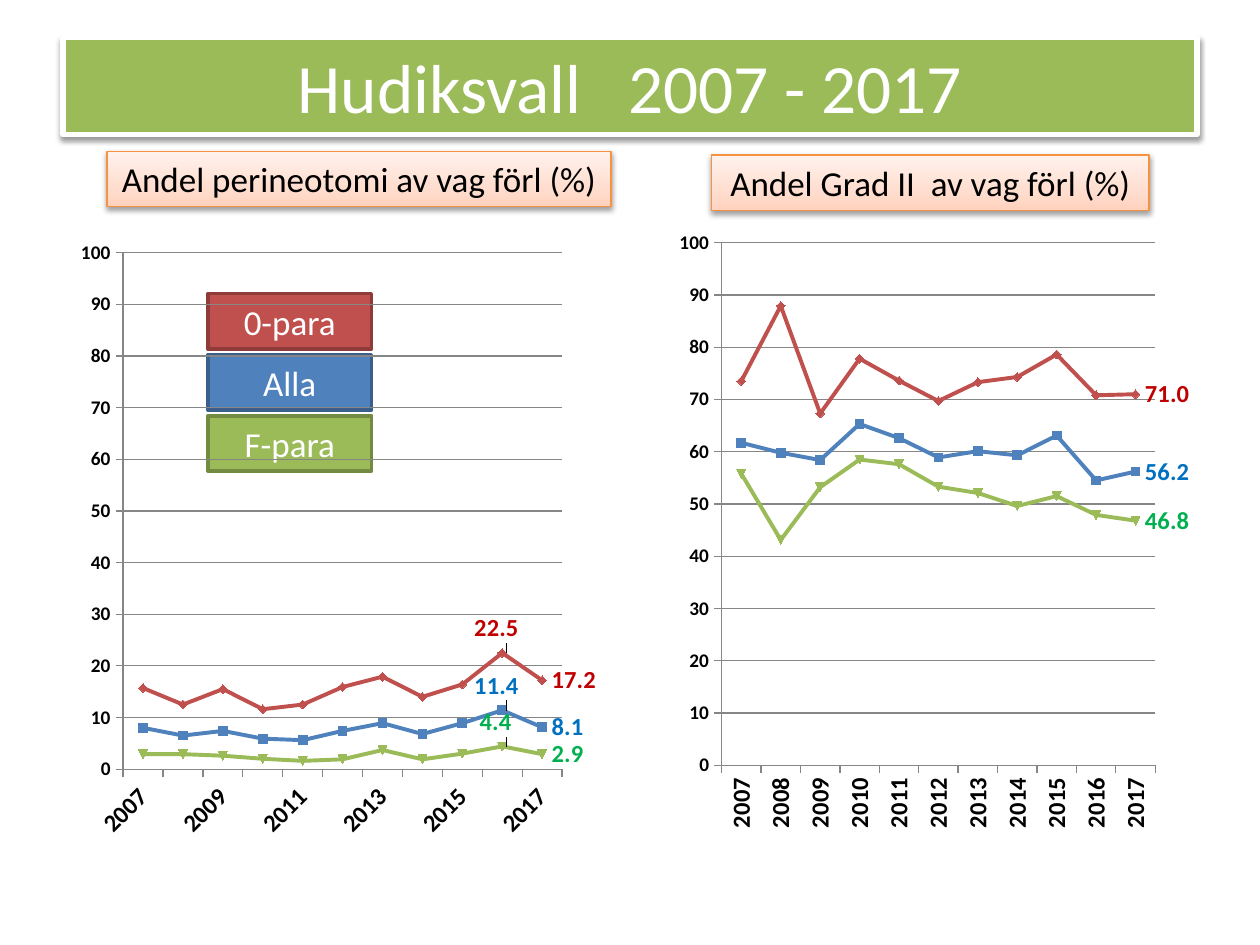
from pptx import Presentation
from pptx.chart.data import CategoryChartData
from pptx.dml.color import RGBColor
from pptx.enum.chart import XL_CHART_TYPE, XL_TICK_MARK
from pptx.enum.shapes import MSO_SHAPE
from pptx.enum.text import MSO_ANCHOR, PP_ALIGN
from pptx.oxml import parse_xml
from pptx.oxml.ns import qn
from pptx.util import Inches, Pt

LINE_MARKERS = XL_CHART_TYPE.LINE_MARKERS
TICK_OUT, TICK_NONE = XL_TICK_MARK.OUTSIDE, XL_TICK_MARK.NONE
RECTANGLE = MSO_SHAPE.RECTANGLE
MIDDLE = MSO_ANCHOR.MIDDLE
CENTER = PP_ALIGN.CENTER

COLUMNS, ROWS = 100, 75
WIDTH, HEIGHT = Inches(10), Inches(7.5)
FONT = "Calibri"
GRID_COLOR = "868686"
NAMESPACES = ('xmlns:a="http://schemas.openxmlformats.org/drawingml/2006/main" '
              'xmlns:c="http://schemas.openxmlformats.org/drawingml/2006/chart"')
YEARS = [str(year) for year in range(2007, 2018)]

GROUPS = {
    "Alla": ("4F81BD", "3A5F8C", "0070C0"),
    "0-para": ("C0504D", "8E3B39", "C00000"),
    "F-para": ("9BBB59", "738A42", "00B050"),
}
PERINEOTOMY = {
    "Alla": (8.0, 6.5, 7.4, 5.9, 5.6, 7.4, 8.9, 6.8, 8.9, 11.4, 8.1),
    "0-para": (15.7, 12.5, 15.5, 11.6, 12.5, 15.9, 17.9, 14.0, 16.4, 22.5, 17.2),
    "F-para": (2.9, 2.9, 2.6, 2.0, 1.6, 1.9, 3.7, 1.9, 3.0, 4.4, 2.9),
}
GRADE_TWO = {
    "Alla": (61.7, 59.8, 58.4, 65.3, 62.6, 58.9, 60.1, 59.3, 63.1, 54.5, 56.2),
    "0-para": (73.5, 87.9, 67.3, 77.8, 73.6, 69.7, 73.3, 74.3, 78.6, 70.8, 71.0),
    "F-para": (55.8, 43.1, 53.2, 58.5, 57.6, 53.3, 52.1, 49.6, 51.5, 47.9, 46.8),
}
LABEL_SHIFTS = {"Alla": (-0.07, -0.04), "0-para": (-0.07, -0.04), "F-para": (-0.06, -0.04)}


def color(value):
    """Turn a hex string into a colour."""
    return RGBColor.from_string(value)


def place(left, top, width, height):
    """Turn grid columns and rows into slide lengths."""
    return (round(WIDTH * left / COLUMNS), round(HEIGHT * top / ROWS),
            round(WIDTH * width / COLUMNS), round(HEIGHT * height / ROWS))


def xml(markup):
    """Parse a markup template whose %s stands for the namespaces."""
    return parse_xml(markup % NAMESPACES)


def set_font(font, size, value, bold=False):
    """Set the face, size, colour and weight of a font."""
    font.name, font.size, font.bold = FONT, Pt(size), bold
    font.color.rgb = color(value)


def add_box(page, area, text, size, text_color, fill, line, line_width):
    """Add a rectangle with one centred line of text."""
    box = page.shapes.add_shape(RECTANGLE, *place(*area))
    box.shadow.inherit = False
    box.line.color.rgb = color(line)
    box.line.width = Pt(line_width)
    box.fill.solid()
    box.fill.fore_color.rgb = color(fill)
    box.text_frame.vertical_anchor = MIDDLE
    para = box.text_frame.paragraphs[0]
    para.text, para.alignment = text, CENTER
    set_font(para.font, size, text_color)
    return box


def add_shadow(box):
    """Give a box a soft shadow below it."""
    box._element.spPr.find(qn("a:effectLst")).append(xml(
        '<a:outerShdw %s blurRad="40000" dist="20000" dir="5400000" rotWithShape="0">'
        '<a:srgbClr val="000000"><a:alpha val="38000"/></a:srgbClr></a:outerShdw>'))


def add_heading(page, area, text):
    """Add a chart heading with an orange gradient and a shadow."""
    box = add_box(page, area, text, 20, "000000", "FFDED0", "F69240", 0.75)
    box.text_frame.word_wrap = False
    box.fill.gradient()
    box.fill.gradient_angle = 90
    stops = box._element.spPr.find(qn("a:gradFill")).find(qn("a:gsLst"))
    for stop in list(stops):
        stops.remove(stop)
    for share, value in ((0, "FFD2BD"), (35, "FFDED0"), (100, "FFF2ED")):
        stops.append(xml(f'<a:gs %s pos="{share * 1000}"><a:srgbClr val="{value}"/></a:gs>'))
    add_shadow(box)


def manual_layout(x, y, width=None, height=None):
    """Build a chart layout, for a plot area if it has a size."""
    if width is None:
        parts = f'<c:x val="{x}"/><c:y val="{y}"/>'
    else:
        parts = ('<c:layoutTarget val="inner"/><c:xMode val="edge"/><c:yMode val="edge"/>'
                 f'<c:x val="{x}"/><c:y val="{y}"/><c:w val="{width}"/><c:h val="{height}"/>')
    return xml(f"<c:layout %s><c:manualLayout>{parts}</c:manualLayout></c:layout>")


def clear_chart_fill():
    """Build shape properties without fill and line."""
    return xml("<c:spPr %s><a:noFill/><a:ln><a:noFill/></a:ln></c:spPr>")


def style_axis(axis, size):
    """Set the line, tick marks and labels of an axis."""
    axis.format.line.color.rgb = color(GRID_COLOR)
    axis.format.line.width = Pt(0.75)
    axis.major_tick_mark, axis.minor_tick_mark = TICK_OUT, TICK_NONE
    set_font(axis.tick_labels.font, size, "000000", True)


def style_series(series, labelled):
    """Colour a series and label the chosen points."""
    line_color, _, label_color = GROUPS[series.name]
    series.smooth = False
    series.format.line.color.rgb = color(line_color)
    series.format.line.width = Pt(2.25)
    series.marker.size = 5
    series.marker.format.fill.solid()
    series.marker.format.fill.fore_color.rgb = color(line_color)
    series.marker.format.line.color.rgb = color(line_color)
    series.data_labels.show_value = False
    for index in labelled:
        label = series.points[index].data_label
        set_font(label.font, 14, label_color, True)
        if index < len(YEARS) - 1:
            label._dLbl.insert(1, manual_layout(*LABEL_SHIFTS[series.name]))


def add_line_chart(page, area, values, plot_area, angle, label_step, labelled):
    """Add a line chart of the three groups by year."""
    data = CategoryChartData(number_format="0.0")
    data.categories = YEARS
    for name in GROUPS:
        data.add_series(name, values[name])
    chart = page.shapes.add_chart(LINE_MARKERS, *place(*area), data).chart
    chart.has_legend = chart.has_title = False
    set_font(chart.font, 10, "000000")
    chart.plots[0].vary_by_categories = False
    for series in chart.plots[0].series:
        style_series(series, labelled)

    years, shares = chart.category_axis, chart.value_axis
    style_axis(years, 14)
    style_axis(shares, 11)
    years.has_major_gridlines = False
    years._element.txPr.find(qn("a:bodyPr")).set("rot", str(angle * 60000))
    years._element.find(qn("c:noMultiLvlLbl")).addprevious(
        xml(f'<c:tickLblSkip %s val="{label_step}"/>'))
    shares.minimum_scale, shares.maximum_scale, shares.major_unit = 0, 100, 10
    shares.tick_labels.number_format = "0"
    shares.tick_labels.number_format_is_linked = False
    shares.major_gridlines.format.line.color.rgb = color(GRID_COLOR)
    shares.major_gridlines.format.line.width = Pt(0.75)

    space = chart._chartSpace
    plot = space.chart.plotArea
    for layout in plot.findall(qn("c:layout")):
        plot.remove(layout)
    plot.insert(0, manual_layout(*plot_area))
    plot.append(clear_chart_fill())
    space.find(qn("c:txPr")).addprevious(clear_chart_fill())


def main():
    """Build the slide and save it."""
    deck = Presentation()
    deck.slide_width, deck.slide_height = WIDTH, HEIGHT
    page = deck.slides.add_slide(deck.slide_layouts[6])
    add_shadow(add_box(page, (5, 3, 90, 7.7), "Hudiksvall   2007 - 2017", 39.6,
                       "FFFFFF", "9BBB59", "FFFFFF", 3))
    add_heading(page, (8.5, 12, 40, 4.4), "Andel perineotomi av vag förl (%)")
    add_heading(page, (56.5, 12.3, 34.7, 4.4), "Andel Grad II  av vag förl (%)")
    for row, name in enumerate(("0-para", "Alla", "F-para")):
        fill, line, _ = GROUPS[name]
        add_box(page, (16.5, 23.3 + 4.85 * row, 13, 4.4), name, 20, "FFFFFF", fill, line, 2)
    add_line_chart(page, (5.1, 18.6, 42.5, 48.8), PERINEOTOMY,
                   (0.11, 0.03, 0.82, 0.84), -45, 2, (9, 10))
    add_line_chart(page, (52.6, 17.8, 42.5, 48.8), GRADE_TWO,
                   (0.11, 0.03, 0.81, 0.85), -90, 1, (10,))
    deck.save("out.pptx")


if __name__ == "__main__":
    main()
